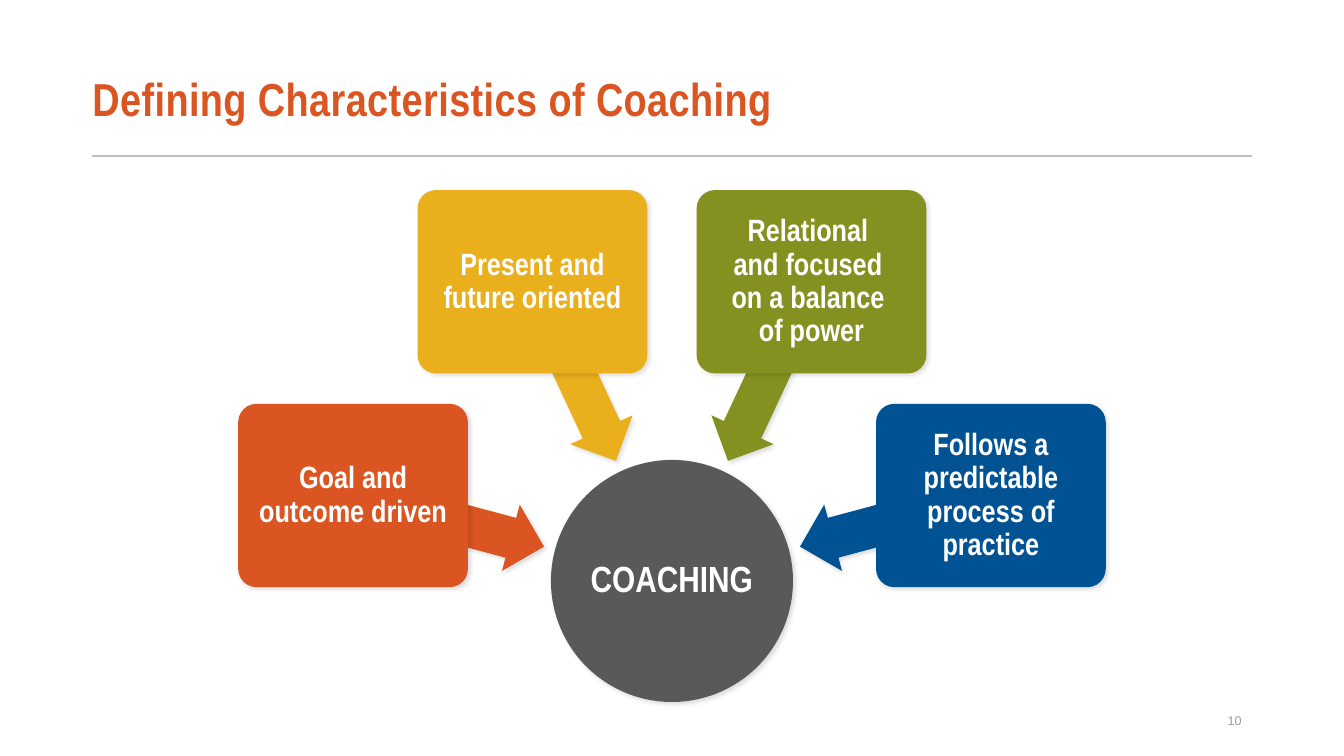
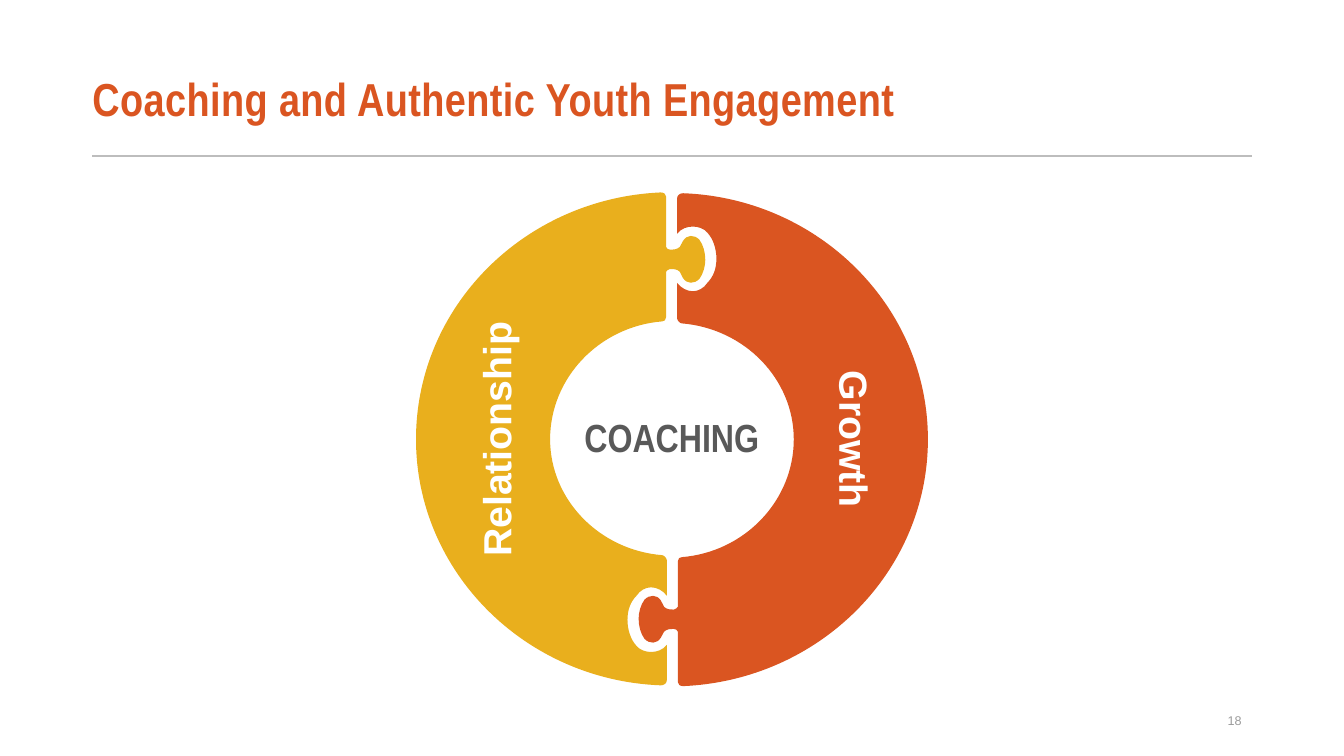
from math import cos, radians, sin

from lxml import etree
from pptx import Presentation
from pptx.dml.color import RGBColor
from pptx.enum.shapes import MSO_CONNECTOR, MSO_SHAPE
from pptx.enum.text import MSO_ANCHOR, PP_ALIGN
from pptx.oxml.ns import qn
from pptx.util import Cm, Pt

LEFT, CENTER, RIGHT = PP_ALIGN.LEFT, PP_ALIGN.CENTER, PP_ALIGN.RIGHT
MIDDLE = MSO_ANCHOR.MIDDLE
ELLIPSE, BOX, ARROW = MSO_SHAPE.OVAL, MSO_SHAPE.ROUNDED_RECTANGLE, MSO_SHAPE.LEFT_ARROW
STRAIGHT = MSO_CONNECTOR.STRAIGHT

COLORS = {
    "orange": "DA5521", "yellow": "E9AF1D", "green": "849120", "blue": "005293",
    "gray": "595959", "rule": "BDBDBD", "number": "9B9B9B", "white": "FFFFFF",
}
NARROW, PLAIN = "Arial Narrow", "Arial"

# Content: slide 1
HUB = "COACHING"
CHARACTERISTICS = [  # text, color, direction from the hub in degrees
    ("Goal and outcome driven", "orange", 195),
    ("Present and future oriented", "yellow", 245),
    ("Relational \nand focused \non a balance \nof power", "green", 295),
    ("Follows a predictable process of practice", "blue", 345),
]

# Content: slide 2
RING_LABELS = [  # text, x of center, width, rotation, font, color
    ("COACHING", 16.93, 5.3, 0, NARROW, "gray"),
    ("Relationship", 12.55, 6.9, 270, PLAIN, "white"),
    ("Growth", 21.49, 6.35, 90, PLAIN, "white"),
]
PIECES = [("yellow", 1), ("orange", -1)]  # color, sign of the half turn

# Puzzle half in cm from the ring center: one point is a line, three are a curve
PUZZLE_START = (-0.13, 5.18)
PUZZLE_HALF = [
    # socket
    [(-0.23, 5.31), (-0.38, 5.36), (-0.53, 5.36)],
    [(-0.66, 5.36), (-0.81, 5.31), (-0.89, 5.21)],
    [(-1.04, 5.05), (-1.12, 4.8), (-1.12, 4.55)],
    [(-1.12, 4.29), (-1.04, 4.09), (-0.89, 3.94)],
    [(-0.81, 3.81), (-0.66, 3.73), (-0.53, 3.73)],
    [(-0.38, 3.73), (-0.23, 3.81), (-0.13, 3.94)],
    [(-0.13, 3.05)],
    # inner arc
    [(-0.13, 3), (-0.2, 2.92), (-0.25, 2.92)],
    [(-1.83, 2.79), (-3.07, 1.52), (-3.07, 0)],
    [(-3.07, -1.55), (-1.83, -2.84), (-0.25, -2.97)],
    [(-0.2, -2.97), (-0.15, -3), (-0.15, -3.07)],
    [(-0.15, -4.22)],
    # tab
    [(-0.13, -4.24), (-0.1, -4.29), (-0.05, -4.29)],
    [(0.05, -4.29), (0.13, -4.29), (0.2, -4.22)],
    [(0.23, -4.17), (0.25, -4.11), (0.28, -4.06)],
    [(0.38, -3.91), (0.56, -3.91), (0.69, -4.04)],
    [(0.79, -4.17), (0.84, -4.37), (0.84, -4.52)],
    [(0.84, -4.7), (0.79, -4.9), (0.69, -5.03)],
    [(0.56, -5.16), (0.38, -5.16), (0.28, -5)],
    [(0.25, -4.95), (0.23, -4.9), (0.2, -4.85)],
    [(0.13, -4.78), (0.05, -4.78), (-0.05, -4.78)],
    [(-0.1, -4.78), (-0.13, -4.8), (-0.15, -4.85)],
    [(-0.15, -6.12)],
    # outer arc
    [(-0.15, -6.17), (-0.2, -6.22), (-0.28, -6.22)],
    [(-3.71, -6.07), (-6.45, -3.35), (-6.45, 0)],
    [(-6.45, 3.33), (-3.71, 6.07), (-0.28, 6.2)],
    [(-0.2, 6.2), (-0.13, 6.15), (-0.13, 6.07)],
]

# Layout in cm
SLIDE_W, SLIDE_H = 33.87, 19.05
MARGIN, CONTENT_W, RULE_Y = 2.33, 29.21, 3.92
HUB_X, HUB_Y, HUB_SIZE = SLIDE_W / 2, 14.64, 6.1
ARROW_RADIUS, ARROW_W, ARROW_H = 5.83, 4.98, 1.73
BOX_RADIUS, BOX_W, BOX_H = 8.32, 5.79, 4.62
RING_X, RING_Y = SLIDE_W / 2, 11.07
LABEL_H = 1.4


def rgb(color):
    return RGBColor.from_string(COLORS[color])


def write(shape, text, size, color, font=NARROW, bold=True, align=CENTER,
          spacing=0.9, insets=None):
    frame = shape.text_frame
    frame.word_wrap = True
    frame.vertical_anchor = MIDDLE
    if insets:
        (frame.margin_left, frame.margin_top,
         frame.margin_right, frame.margin_bottom) = [Cm(inset) for inset in insets]
    paragraph = frame.paragraphs[0]
    paragraph.text = text
    paragraph.alignment = align
    paragraph.line_spacing = spacing
    for run in paragraph.runs:
        run.font.size, run.font.name, run.font.bold = Pt(size), font, bold
        run.font.color.rgb = rgb(color)
    return paragraph


def paint(shape, color):
    shape.fill.solid()
    shape.fill.fore_color.rgb = rgb(color)
    shape.line.fill.background()
    shape.shadow.inherit = False


def add_soft_shadow(shape):
    effects = shape._element.spPr.find(qn("a:effectLst"))
    shadow = etree.SubElement(effects, qn("a:outerShdw"), blurRad=str(Pt(3)),
                              dist=str(Pt(2)), dir="2700000", rotWithShape="0")
    black = etree.SubElement(shadow, qn("a:srgbClr"), val="000000")
    etree.SubElement(black, qn("a:alpha"), val="12000")


def add_centered(slide, kind, x, y, width, height, color):
    shape = slide.shapes.add_shape(kind, Cm(x - width / 2), Cm(y - height / 2),
                                   Cm(width), Cm(height))
    paint(shape, color)
    add_soft_shadow(shape)
    return shape


def around_hub(radius, degrees):
    angle = radians(degrees)
    return HUB_X + radius * cos(angle), HUB_Y + radius * sin(angle)


def add_titled_slide(prs, title_text, number):
    slide = prs.slides.add_slide(prs.slide_layouts[5])
    rule = slide.shapes.add_connector(STRAIGHT, Cm(MARGIN), Cm(RULE_Y),
                                      Cm(MARGIN + CONTENT_W), Cm(RULE_Y))
    rule.line.color.rgb = rgb("rule")
    rule.line.width = Pt(1.5)
    etree.SubElement(rule._element.spPr, qn("a:effectLst"))

    title = slide.shapes.title
    title.left, title.top = Cm(MARGIN), Cm(1.37)
    title.width, title.height = Cm(CONTENT_W), Cm(2.41)
    paragraph = write(title, title_text, 33, "orange", align=LEFT,
                      spacing=0.87, insets=(0, 0.13, 0.25, 0.13))
    paragraph.runs[0].font._element.set("spc", "30")

    page = slide.shapes.add_textbox(Cm(MARGIN + CONTENT_W - 7.62), Cm(17.65),
                                    Cm(7.62), Cm(1.02))
    write(page, number, 9, "number", PLAIN, bold=False, align=RIGHT, spacing=1.0)
    return slide


def add_puzzle_half(slide, color, sign):
    def place(point):
        return Cm(RING_X + sign * point[0]), Cm(RING_Y + sign * point[1])

    builder = slide.shapes.build_freeform(*place(PUZZLE_START))
    builder.add_line_segments([place(segment[-1]) for segment in PUZZLE_HALF], close=True)
    half = builder.convert_to_shape()
    paint(half, color)

    # Bend the straight segments into cubic curves
    lines = list(half._element.iter(qn("a:lnTo")))
    for line, segment in zip(lines, PUZZLE_HALF):
        if len(segment) == 1:
            continue
        curve = etree.Element(qn("a:cubicBezTo"))
        for x, y in map(place, segment):
            etree.SubElement(curve, qn("a:pt"), x=str(x - half.left), y=str(y - half.top))
        line.getparent().replace(line, curve)


def build_characteristics(prs):
    slide = add_titled_slide(prs, "Defining Characteristics of Coaching", "10")
    hub = add_centered(slide, ELLIPSE, HUB_X, HUB_Y, HUB_SIZE, HUB_SIZE, "gray")
    write(hub, HUB, 26, "white", insets=[0.05] * 4)
    for text, color, degrees in CHARACTERISTICS:
        arrow = add_centered(slide, ARROW, *around_hub(ARROW_RADIUS, degrees),
                             ARROW_W, ARROW_H, color)
        arrow.adjustments[0], arrow.adjustments[1] = 0.6, 0.5
        arrow.rotation = degrees
        box = add_centered(slide, BOX, *around_hub(BOX_RADIUS, degrees),
                           BOX_W, BOX_H, color)
        box.adjustments[0] = 0.1
        write(box, text, 22, "white", insets=[0.13] * 4)


def build_engagement(prs):
    slide = add_titled_slide(prs, "Coaching and Authentic Youth Engagement", "18")
    for color, sign in PIECES:
        add_puzzle_half(slide, color, sign)
    for text, x, width, rotation, font, color in RING_LABELS:
        label = slide.shapes.add_textbox(Cm(x - width / 2), Cm(RING_Y - LABEL_H / 2),
                                         Cm(width), Cm(LABEL_H))
        label.rotation = rotation
        write(label, text, 28, color, font, spacing=0.95)


def main():
    prs = Presentation()
    prs.slide_width, prs.slide_height = Cm(SLIDE_W), Cm(SLIDE_H)
    build_characteristics(prs)
    build_engagement(prs)
    prs.save("out.pptx")


if __name__ == "__main__":
    main()
